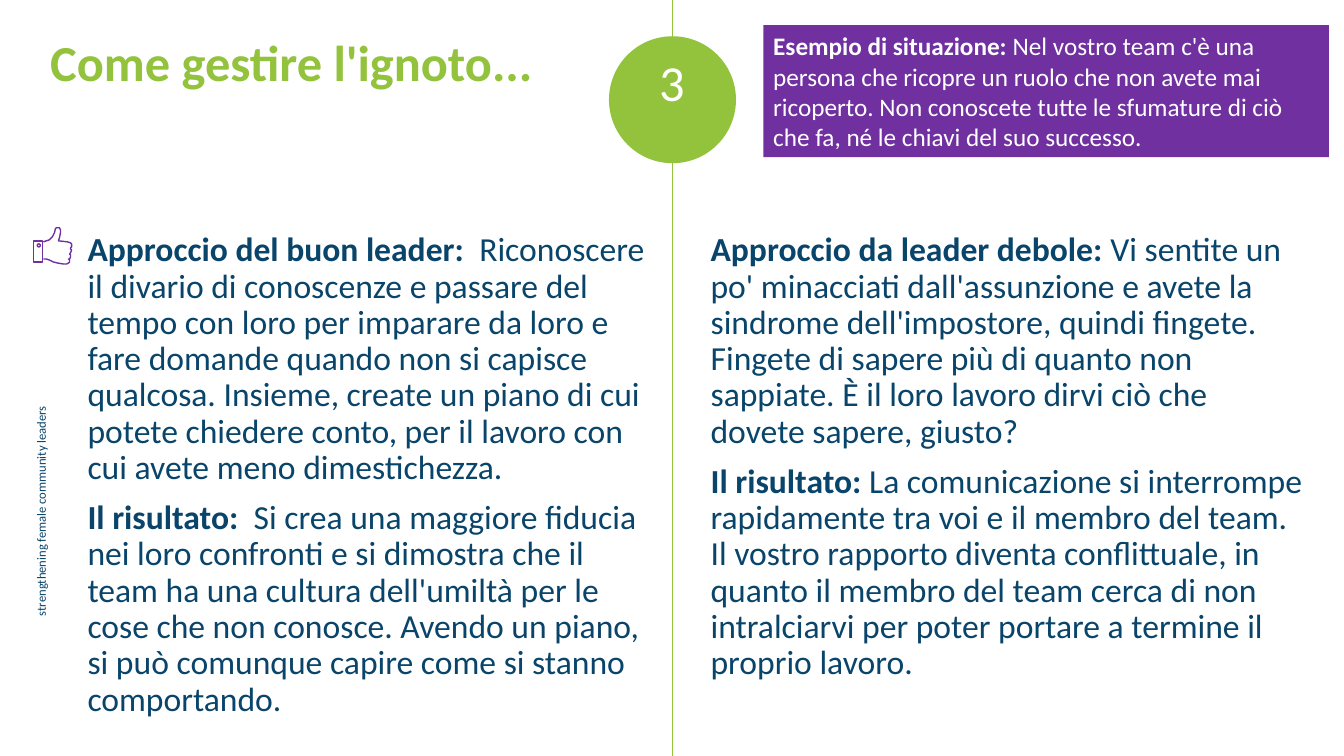
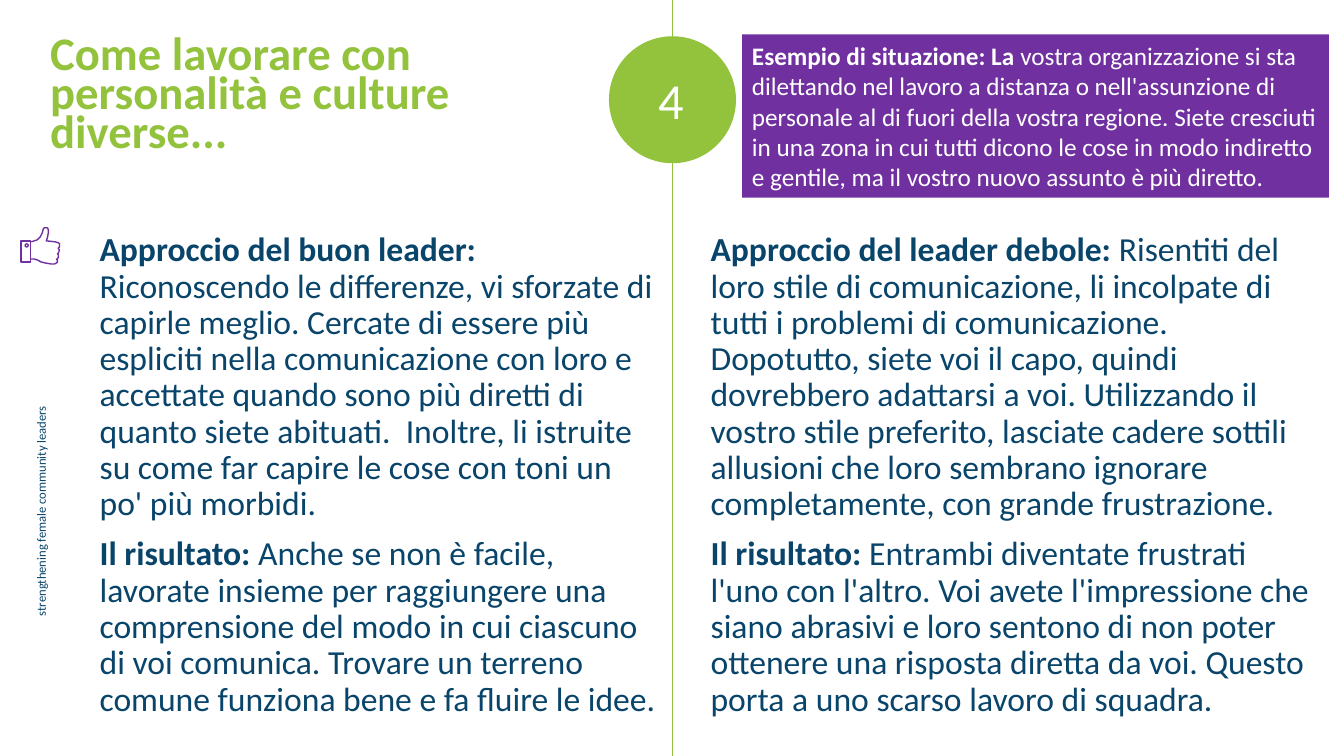
import pptx
import pptx.dml.color
import pptx.enum.shapes
import pptx.enum.text
import pptx.oxml
import pptx.util
from pptx.util import Inches

COLOURS = {"green": "93C23D", "navy": "09446A", "purple": "7030A0", "white": "FFFFFF"}
FONT = "Calibri"
SLIDE_WIDTH, SLIDE_HEIGHT = 13.33, 7.5
MIDDLE = 6.67
BADGE_TOP, BADGE_SIZE = 0.36, 1.26
BODY_TOP, BODY_HEIGHT = 2.26, 4.07

THUMB_OUTLINE = [
    (10, 31), (13, 31), (16, 32), (20, 34), (24, 35), (30, 36), (33, 36),
    (35, 35), (36, 34), (36, 32), (35, 31), (36, 31), (37, 29), (37, 27),
    (36, 26), (37, 25), (38, 22), (37, 21), (37, 20), (38, 19), (38, 16),
    (37, 15), (34, 14), (25, 13), (26, 10), (27, 5), (27, 2), (26, 0),
    (23, 0), (22, 1), (21, 5), (19, 9), (16, 12), (10, 14),
]
CUFF_OUTLINE = [(0, 13), (0, 34), (9, 34), (9, 13)]

SITUATIONS = [
    {
        "number": "3",
        "number_box": (6.04, 0.53, 1.26, 0.94),
        "title": "Come gestire l'ignoto...",
        "title_box": (0.4, 0.33, 5.64, 1.14),
        "title_format": {"size": 36, "line_spacing": 0.9},
        "callout_box": (7.57, 0.25, 5.61, 1.31),
        "callout": [(
            "Esempio di situazione: ",
            "Nel vostro team c'è una persona che ricopre un ruolo che non avete mai ricoperto. "
            "Non conoscete tutte le sfumature di ciò che fa, né le chiavi del suo successo.",
        )],
        "thumb_left": 0.33,
        "good_box": (0.77, BODY_TOP, 5.74, BODY_HEIGHT),
        "good": [
            (
                "Approccio del buon leader:  ",
                "Riconoscere il divario di conoscenze e passare del tempo con loro per imparare "
                "da loro e fare domande quando non si capisce qualcosa. Insieme, create un piano "
                "di cui potete chiedere conto, per il lavoro con cui avete meno dimestichezza.",
            ),
            (
                "Il risultato:  ",
                "Si crea una maggiore fiducia nei loro confronti e si dimostra che il team ha una "
                "cultura dell'umiltà per le cose che non conosce. Avendo un piano, si può comunque "
                "capire come si stanno comportando.",
            ),
        ],
        "weak_box": (6.95, BODY_TOP, 6.13, BODY_HEIGHT),
        "weak": [
            (
                "Approccio da leader debole: ",
                "Vi sentite un po' minacciati dall'assunzione e avete la sindrome dell'impostore, "
                "quindi fingete. Fingete di sapere più di quanto non sappiate. È il loro lavoro "
                "dirvi ciò che dovete sapere, giusto?",
            ),
            (
                "Il risultato: ",
                "La comunicazione si interrompe rapidamente tra voi e il membro del team. Il vostro "
                "rapporto diventa conflittuale, in quanto il membro del team cerca di non "
                "intralciarvi per poter portare a termine il proprio lavoro.",
            ),
        ],
    },
    {
        "number": "4",
        "number_box": (6.03, 0.7, 1.26, 0.94),
        "title": "Come lavorare con personalità e culture diverse...",
        "title_box": (0.4, 0.34, 5.64, 1.31),
        "title_format": {"size": 33.3, "line_spacing": 0.7},
        "callout_box": (7.36, 0.34, 5.82, 1.62),
        "callout": [(
            "Esempio di situazione: La ",
            "vostra organizzazione si sta dilettando nel lavoro a distanza o nell'assunzione di "
            "personale al di fuori della vostra regione. Siete cresciuti in una zona in cui tutti "
            "dicono le cose in modo indiretto e gentile, ma il vostro nuovo assunto è più diretto.",
        )],
        "thumb_left": 0.21,
        "good_box": (0.89, BODY_TOP, 5.77, BODY_HEIGHT),
        "good": [
            (
                "Approccio del buon leader: ",
                "Riconoscendo le differenze, vi sforzate di capirle meglio. Cercate di essere più "
                "espliciti nella comunicazione con loro e accettate quando sono più diretti di "
                "quanto siete abituati.  Inoltre, li istruite su come far capire le cose con toni "
                "un po' più morbidi.",
            ),
            (
                "Il risultato: ",
                "Anche se non è facile, lavorate insieme per raggiungere una comprensione del modo "
                "in cui ciascuno di voi comunica. Trovare un terreno comune funziona bene e fa "
                "fluire le idee.",
            ),
        ],
        "weak_box": (6.95, BODY_TOP, 6.24, BODY_HEIGHT),
        "weak": [
            (
                "Approccio del leader debole: ",
                "Risentiti del loro stile di comunicazione, li incolpate di tutti i problemi di "
                "comunicazione. Dopotutto, siete voi il capo, quindi dovrebbero adattarsi a voi. "
                "Utilizzando il vostro stile preferito, lasciate cadere sottili allusioni che loro "
                "sembrano ignorare completamente, con grande frustrazione.",
            ),
            (
                "Il risultato: ",
                "Entrambi diventate frustrati l'uno con l'altro. Voi avete l'impressione che siano "
                "abrasivi e loro sentono di non poter ottenere una risposta diretta da voi. Questo "
                "porta a uno scarso lavoro di squadra.",
            ),
        ],
    },
]


def colour(name):
    return pptx.dml.color.RGBColor.from_string(COLOURS[name])


def write_text(shape, paragraphs, size=24, ink="navy", align="LEFT", anchor="TOP",
               line_spacing=None, space_before=0, wrap=True):
    frame = shape.text_frame
    frame.word_wrap = wrap
    frame.vertical_anchor = pptx.enum.text.MSO_ANCHOR[anchor]
    for index, (bold_text, plain_text) in enumerate(paragraphs):
        paragraph = frame.add_paragraph() if index else frame.paragraphs[0]
        paragraph.alignment = pptx.enum.text.PP_ALIGN[align]
        paragraph.line_spacing = line_spacing
        if index:
            paragraph.space_before = pptx.util.Pt(space_before)
        for text, bold in ((bold_text, True), (plain_text, False)):
            if text:
                run = paragraph.add_run()
                run.text = text
                run.font.name = FONT
                run.font.size = pptx.util.Pt(size)
                run.font.bold = bold
                run.font.color.rgb = colour(ink)


def add_text(slide, box, paragraphs, **text_format):
    shape = slide.shapes.add_textbox(*map(Inches, box))
    write_text(shape, paragraphs, **text_format)
    return shape


def add_filled_shape(slide, kind, box, fill):
    shape = slide.shapes.add_shape(
        pptx.enum.shapes.MSO_SHAPE[kind], *map(Inches, box))
    shape.shadow.inherit = False
    shape.fill.solid()
    shape.fill.fore_color.rgb = colour(fill)
    shape.line.fill.background()
    return shape


def add_frame(slide):
    divider = slide.shapes.add_connector(
        pptx.enum.shapes.MSO_CONNECTOR.STRAIGHT,
        Inches(MIDDLE), 0, Inches(MIDDLE), Inches(SLIDE_HEIGHT))
    divider.line.color.rgb = colour("green")
    divider.line.width = pptx.util.Pt(1)
    properties = divider.element.spPr
    properties.append(pptx.oxml.parse_xml(
        '<a:effectLst xmlns:a="http://schemas.openxmlformats.org/drawingml/2006/main"/>'))
    add_filled_shape(slide, "OVAL", (6.04, BADGE_TOP, BADGE_SIZE, BADGE_SIZE), "green")
    motto = add_text(slide, (-0.76, 4.92, 2.33, 0.25),
                     [("", "strengthening female community leaders")], size=9, wrap=False)
    motto.rotation = 270


def add_thumb(slide, left, top):
    group = slide.shapes.add_group_shape()
    parts = []
    for outline, closed in ((CUFF_OUTLINE, True), (THUMB_OUTLINE, False)):
        builder = group.shapes.build_freeform(*outline[0], scale=Inches(0.01))
        builder.add_line_segments(outline[1:], close=closed)
        parts.append(builder.convert_to_shape(Inches(left), Inches(top)))
    parts.append(group.shapes.add_shape(
        pptx.enum.shapes.MSO_SHAPE.OVAL,
        Inches(left + 0.04), Inches(top + 0.16), Inches(0.03), Inches(0.03)))
    for shape in parts:
        shape.shadow.inherit = False
        shape.fill.background()
        shape.line.color.rgb = colour("purple")
        shape.line.width = pptx.util.Pt(1)


def add_header(slide, situation):
    add_text(slide, situation["title_box"], [(situation["title"], "")],
             ink="green", **situation["title_format"])
    add_text(slide, situation["number_box"], [("", situation["number"])],
             size=36, ink="white", align="CENTER", line_spacing=0.9)
    callout = add_filled_shape(slide, "RECTANGLE", situation["callout_box"], "purple")
    write_text(callout, situation["callout"], size=18, ink="white", anchor="MIDDLE")


def add_approaches(slide, situation):
    for side in ("weak", "good"):
        add_text(slide, situation[side + "_box"], situation[side],
                 line_spacing=0.9, space_before=10)
    add_thumb(slide, situation["thumb_left"], BODY_TOP)


def add_situation_slide(presentation, situation):
    slide = presentation.slides.add_slide(presentation.slide_layouts[6])
    add_frame(slide)
    add_header(slide, situation)
    add_approaches(slide, situation)


def main():
    presentation = pptx.Presentation()
    presentation.slide_width = Inches(SLIDE_WIDTH)
    presentation.slide_height = Inches(SLIDE_HEIGHT)
    for situation in SITUATIONS:
        add_situation_slide(presentation, situation)
    presentation.save("out.pptx")


if __name__ == "__main__":
    main()
